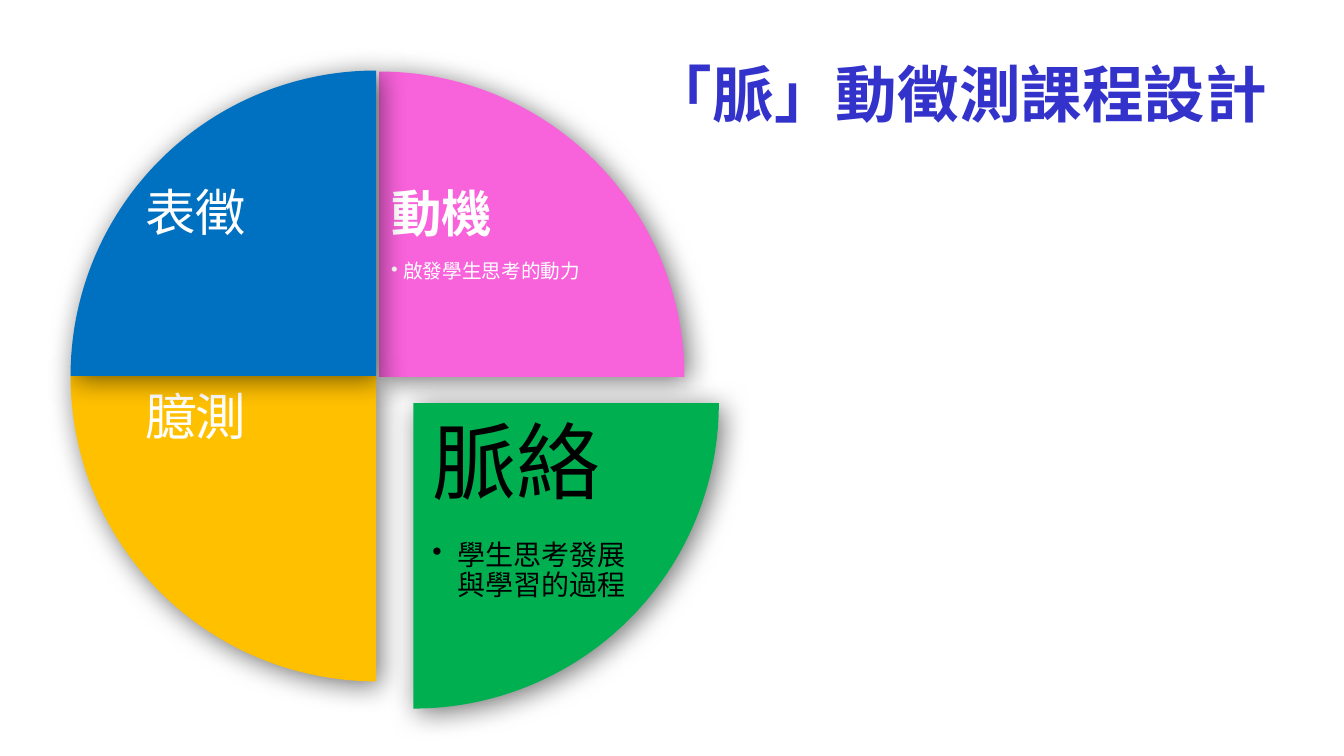
from dataclasses import dataclass

from lxml import etree
from pptx import Presentation
from pptx.dml.color import RGBColor
from pptx.enum.shapes import MSO_SHAPE
from pptx.enum.text import MSO_ANCHOR, PP_ALIGN
from pptx.oxml import parse_xml
from pptx.oxml.ns import nsdecls, qn
from pptx.util import Pt

PIE = MSO_SHAPE.PIE
TOP, MIDDLE = MSO_ANCHOR.TOP, MSO_ANCHOR.MIDDLE
RIGHT = PP_ALIGN.RIGHT
SCALE = 9144
TURN = 54


@dataclass(frozen=True)
class Theme:
    """Colours, fonts and type sizes of the slide."""
    pink: str = "F862DB"
    green: str = "00B050"
    gold: str = "FFC000"
    blue: str = "0070C0"
    white: str = "FFFFFF"
    black: str = "000000"
    ink: str = "3333CC"
    plain: str = "League Spartan"
    hans: str = "Noto Sans CJK SC"
    hant: str = "Noto Sans CJK TC"
    title: int = 44
    head: int = 36
    large: int = 60
    note: int = 14
    body: int = 20


THEME = Theme()


@dataclass(frozen=True)
class Part:
    """One quarter of the wheel: its place, fill and words."""
    box: tuple
    turn: int
    fill: str
    inset: tuple
    head: str
    font: str = THEME.plain
    size: int = THEME.head
    color: str = THEME.white
    bold: bool = False
    pad: int = 5
    note: str = ""
    small: int = THEME.note
    face: str = THEME.plain
    hang: int = 12


PARTS = (
    Part((73, 71, 606, 606), 3, THEME.pink, (310, 112), "動機", THEME.hans,
         bold=True, note="啟發學生思考的動力"),
    Part((107, 97, 606, 606), 0, THEME.green, (314, 313), "脈絡", THEME.hans,
         THEME.large, THEME.black, pad=8, note="學生思考發展與學習的過程",
         small=THEME.body, face=THEME.hans, hang=25),
    Part((70, 70, 606, 606), 1, THEME.gold, (69, 314), "臆測"),
    Part((70, 70, 606, 606), 2, THEME.blue, (69, 112), "表徵"),
)
TITLE = (("「", THEME.hant), ("脈", THEME.hans),
         ("」", THEME.hant), ("動徵測課程設計", THEME.hans))


def px(*vals):
    """Turn px lengths into EMU."""
    return [val * SCALE for val in vals]


def style(font, size, color, bold=False, name=None):
    """Set the look of a font."""
    font.size, font.bold = Pt(size), bold
    font.color.rgb = RGBColor.from_string(color)
    if name:
        font.name = name


def frame(slide, box, pad, anchor=TOP):
    """Add a wrapping text box and return its frame."""
    text = slide.shapes.add_textbox(*px(*box)).text_frame
    text.word_wrap, text.vertical_anchor = True, anchor
    text.margin_left = text.margin_right = pad * SCALE
    text.margin_top = text.margin_bottom = pad * SCALE
    return text


def bullet(para, hang):
    """Give a paragraph a hanging bullet."""
    props = para._p.get_or_add_pPr()
    props.set("marL", str(hang * SCALE))
    props.set("indent", str(-hang * SCALE))
    etree.SubElement(props, qn("a:buChar")).set("char", "•")


def shade(shape):
    """Give a shape a soft drop shadow."""
    shape.shadow.inherit = False
    shape._element.spPr.find(qn("a:effectLst")).append(parse_xml(
        f'<a:outerShdw {nsdecls("a")} blurRad="{Pt(20)}" dist="{Pt(4)}" '
        f'dir="2700000" algn="tl" rotWithShape="0">'
        f'<a:srgbClr val="{THEME.black}"><a:alpha val="55000"/></a:srgbClr>'
        '</a:outerShdw>'))


def wedge(slide, part):
    """Draw one quarter with its heading and note."""
    shape = slide.shapes.add_shape(PIE, *px(*part.box))
    shape.adjustments[0] = part.turn * TURN
    shape.adjustments[1] = (part.turn + 1) % 4 * TURN
    shape.fill.solid()
    shape.fill.fore_color.rgb = RGBColor.from_string(part.fill)
    shape.line.fill.background()
    shade(shape)

    left, top = part.box[0] + part.inset[0], part.box[1] + part.inset[1]
    text = frame(slide, (left, top, 224, 180), part.pad)
    head = text.paragraphs[0]
    head.text, head.line_spacing = part.head, 0.9
    style(head.font, part.size, part.color, part.bold, part.font)
    if part.note:
        head.space_after = Pt(round(part.size * 0.35))
        note = text.add_paragraph()
        note.text, note.level = part.note, 1
        bullet(note, part.hang)
        note.line_spacing = 0.9
        style(note.font, part.small, part.color, name=part.face)


def title(slide, box):
    """Write the slide title, flush right."""
    para = frame(slide, box, 10, MIDDLE).paragraphs[0]
    para.alignment = RIGHT
    style(para.font, THEME.title, THEME.ink, True)
    for words, name in TITLE:
        run = para.add_run()
        run.text, run.font.name = words, name


def main():
    """Build and save the slide."""
    deck = Presentation()
    deck.slide_width, deck.slide_height = px(1333, 750)
    slide = deck.slides.add_slide(deck.slide_layouts[6])
    for part in PARTS:
        wedge(slide, part)
    title(slide, (67, 30, 1200, 125))
    deck.save("out.pptx")


if __name__ == "__main__":
    main()
